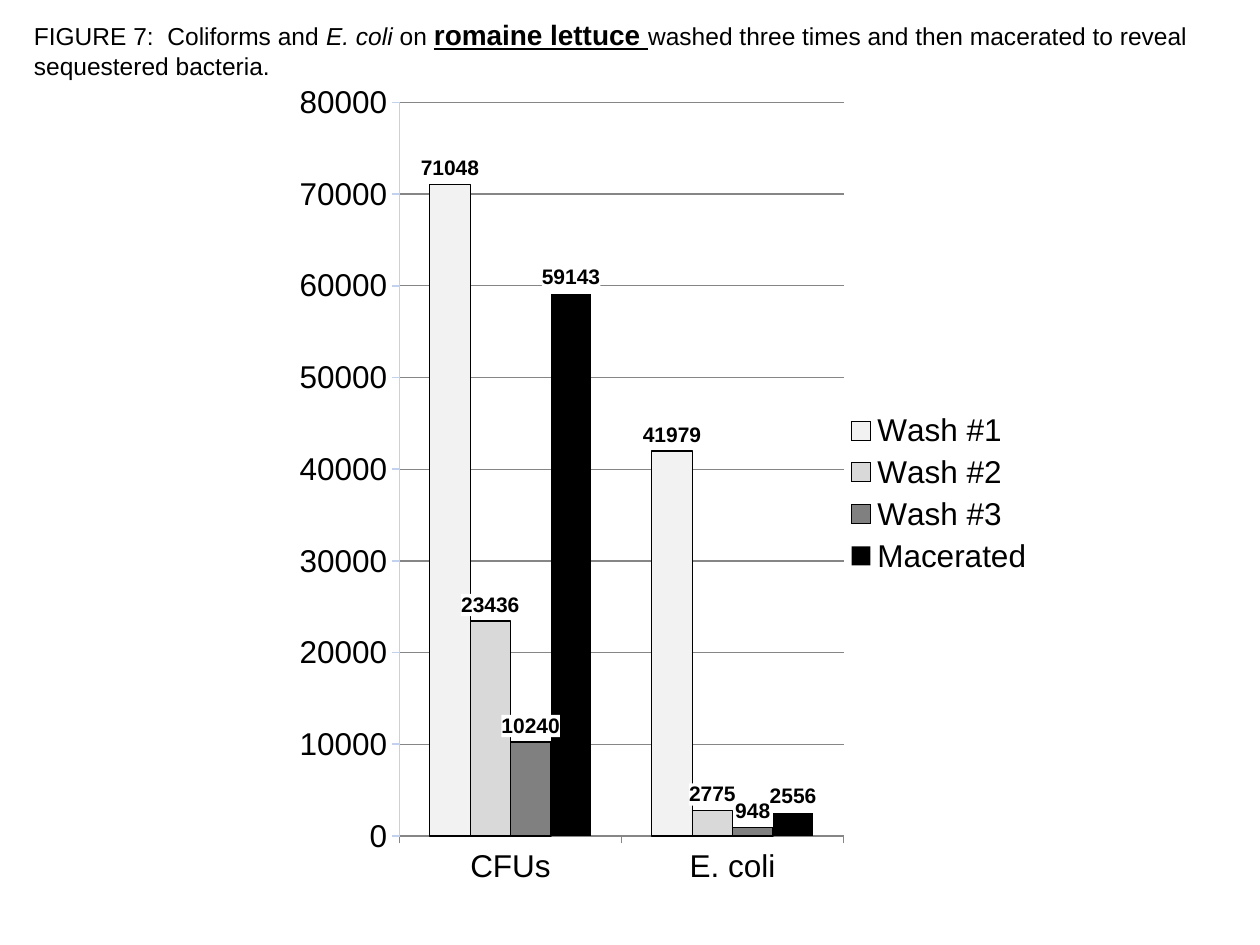
"""Build the Figure 7 slide: bacteria counts on washed and macerated romaine lettuce."""
from lxml import etree
from pptx import Presentation
from pptx.chart.data import CategoryChartData
from pptx.dml.color import RGBColor
from pptx.enum.chart import XL_CHART_TYPE, XL_LABEL_POSITION, XL_LEGEND_POSITION, XL_TICK_MARK
from pptx.enum.text import MSO_AUTO_SIZE
from pptx.oxml import parse_xml
from pptx.oxml.ns import nsdecls, qn
from pptx.util import Inches, Pt

COLUMN = XL_CHART_TYPE.COLUMN_CLUSTERED
OUTSIDE_END = XL_LABEL_POSITION.OUTSIDE_END
LEGEND_RIGHT = XL_LEGEND_POSITION.RIGHT
TICK_OUTSIDE = XL_TICK_MARK.OUTSIDE
FIT_SHAPE = MSO_AUTO_SIZE.SHAPE_TO_FIT_TEXT

FONT = "Arial"
COLORS = {
    "text": "000000",
    "axis": "C2D1ED",
    "grid": "868686",
    "label": "FFFFFF",
    "Wash #1": "F2F2F2",
    "Wash #2": "D9D9D9",
    "Wash #3": "808080",
    "Macerated": "000000",
}
COUNTS = {
    "Wash #1": (71048, 41979),
    "Wash #2": (23436, 2775),
    "Wash #3": (10240, 948),
    "Macerated": (59143, 2556),
}
CAPTION = [
    ("FIGURE 7:  Coliforms and ", 14, False, False),
    ("E. coli", 14, True, False),
    (" on ", 14, False, False),
    ("romaine lettuce ", 16, False, True),
    ("washed three times and then macerated to reveal sequestered bacteria.", 14, False, False),
]
PLOT_LAYOUT = {
    "layoutTarget": "inner", "xMode": "edge", "yMode": "edge",
    "x": 0.163, "y": 0.035, "w": 0.574, "h": 0.873,
}


def color(name):
    return RGBColor.from_string(COLORS[name])


def style_line(line, name, width):
    line.color.rgb = color(name)
    line.width = Pt(width)


presentation = Presentation()
presentation.slide_width = Inches(10)
presentation.slide_height = Inches(7.5)
slide = presentation.slides.add_slide(presentation.slide_layouts[6])

chart_data = CategoryChartData()
chart_data.categories = ["CFUs", "E. coli"]
for name, values in COUNTS.items():
    chart_data.add_series(name, values)
chart = slide.shapes.add_chart(
    COLUMN, Inches(2.17), Inches(0.58), Inches(6.14), Inches(6.67), chart_data
).chart
chart.has_title = False
chart.font.name = FONT
chart.font.size = Pt(18)
chart.font.color.rgb = color("text")
chart.has_legend = True
chart.legend.position = LEGEND_RIGHT
chart.legend.include_in_layout = False

value_axis = chart.value_axis
value_axis.minimum_scale = 0
value_axis.maximum_scale = 80000
value_axis.major_unit = 10000
value_axis.tick_labels.number_format = "General"
value_axis.tick_labels.number_format_is_linked = False
value_axis.has_major_gridlines = True
style_line(value_axis.major_gridlines.format.line, "grid", 0.75)
style_line(value_axis.format.line, "axis", 1)
style_line(chart.category_axis.format.line, "grid", 0.75)
for axis in (value_axis, chart.category_axis):
    axis.major_tick_mark = TICK_OUTSIDE

plot = chart.plots[0]
plot.gap_width = 150
plot.overlap = 0
plot.vary_by_categories = False
for series in plot.series:
    series.format.fill.solid()
    series.format.fill.fore_color.rgb = color(series.name)
    series.invert_if_negative = False
    if series.name == "Macerated":
        series.format.line.fill.background()
    else:
        style_line(series.format.line, "text", 0.75)
    labels = series.data_labels
    labels.show_value = True
    labels.position = OUTSIDE_END
    labels.font.name = FONT
    labels.font.size = Pt(12)
    labels.font.bold = True
    labels.font.color.rgb = color("text")
    label_fill = parse_xml(
        f'<c:spPr {nsdecls("c", "a")}><a:solidFill>'
        f'<a:srgbClr val="{COLORS["label"]}"/></a:solidFill></c:spPr>'
    )
    labels._element.find(qn("c:txPr")).addprevious(label_fill)

plot_area = chart._chartSpace.find(qn("c:chart")).find(qn("c:plotArea"))
for old_layout in plot_area.findall(qn("c:layout")):
    plot_area.remove(old_layout)
layout = parse_xml(f'<c:layout {nsdecls("c")}><c:manualLayout/></c:layout>')
for key, value in PLOT_LAYOUT.items():
    etree.SubElement(layout[0], qn(f"c:{key}")).set("val", str(value))
plot_area.insert(0, layout)

caption = slide.shapes.add_textbox(Inches(0.17), Inches(0.09), Inches(9.42), Inches(0.61))
caption.text_frame.word_wrap = True
caption.text_frame.auto_size = FIT_SHAPE
paragraph = caption.text_frame.paragraphs[0]
for text, size, italic, emphasis in CAPTION:
    run = paragraph.add_run()
    run.text = text
    run.font.name = FONT
    run.font.size = Pt(size)
    run.font.italic = italic
    run.font.bold = emphasis
    run.font.underline = emphasis
    run.font.color.rgb = color("text")

presentation.save("out.pptx")
